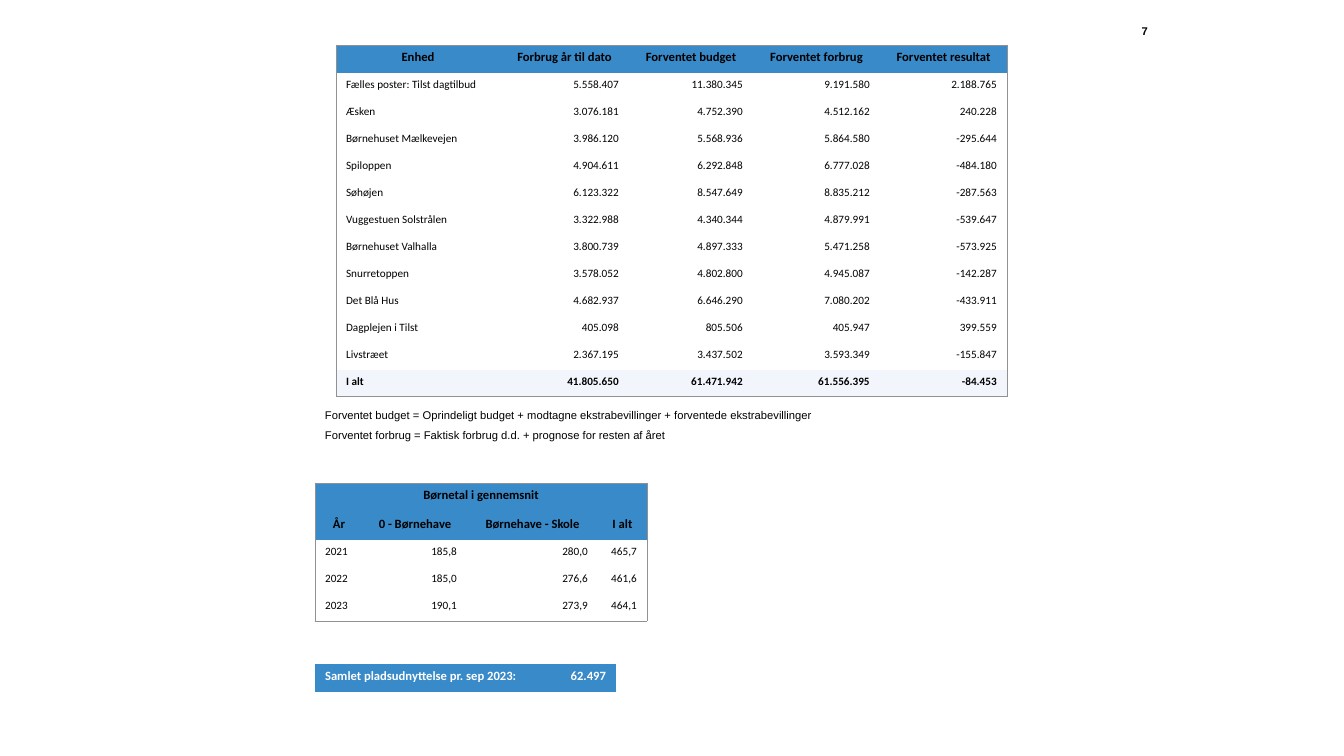
import pptx
import pptx.util
import pptx.oxml
import pptx.oxml.ns
import pptx.dml.color
import pptx.enum.text

RGB = pptx.dml.color.RGBColor
BLUE = RGB(0x39, 0x8A, 0xC9)
PALE = RGB(0xF2, 0xF5, 0xFC)
WHITE = RGB(0xFF, 0xFF, 0xFF)
BLACK = RGB(0, 0, 0)
EDGE = RGB(0x91, 0x91, 0x91)
PLAIN = "{2D5ABB26-0587-4C30-8999-92F81FD0307C}"
SCALE = 914400 / 100.8
ALIGN = pptx.enum.text.PP_ALIGN
ANCHOR = pptx.enum.text.MSO_ANCHOR
SIZE = pptx.enum.text.MSO_AUTO_SIZE

HEAD = {"size": 9, "bold": True, "color": BLACK, "fill": BLUE}
BODY = {"size": 8, "bold": False, "color": BLACK, "fill": WHITE}
TOTAL = {"size": 8, "bold": True, "color": BLACK, "fill": PALE}
BAND = {"size": 9, "bold": True, "color": WHITE, "fill": BLUE}

UNITS = [
    ("Enhed", "Forbrug år til dato", "Forventet budget", "Forventet forbrug", "Forventet resultat"),
    ("Fælles poster: Tilst dagtilbud", "5.558.407", "11.380.345", "9.191.580", "2.188.765"),
    ("Æsken", "3.076.181", "4.752.390", "4.512.162", "240.228"),
    ("Børnehuset Mælkevejen", "3.986.120", "5.568.936", "5.864.580", "-295.644"),
    ("Spiloppen", "4.904.611", "6.292.848", "6.777.028", "-484.180"),
    ("Søhøjen", "6.123.322", "8.547.649", "8.835.212", "-287.563"),
    ("Vuggestuen Solstrålen", "3.322.988", "4.340.344", "4.879.991", "-539.647"),
    ("Børnehuset Valhalla", "3.800.739", "4.897.333", "5.471.258", "-573.925"),
    ("Snurretoppen", "3.578.052", "4.802.800", "4.945.087", "-142.287"),
    ("Det Blå Hus", "4.682.937", "6.646.290", "7.080.202", "-433.911"),
    ("Dagplejen i Tilst", "405.098", "805.506", "405.947", "399.559"),
    ("Livstræet", "2.367.195", "3.437.502", "3.593.349", "-155.847"),
    ("I alt", "41.805.650", "61.471.942", "61.556.395", "-84.453"),
]
KIDS = [
    ("Børnetal i gennemsnit",),
    ("År", "0 - Børnehave", "Børnehave - Skole", "I alt"),
    ("2021", "185,8", "280,0", "465,7"),
    ("2022", "185,0", "276,6", "461,6"),
    ("2023", "190,1", "273,9", "464,1"),
]
USAGE = [("Samlet pladsudnyttelse pr. sep 2023:", "62.497")]

TABLES = [
    {"rows": UNITS, "at": (336, 45), "cols": (164, 129, 124, 127, 127),
     "high": [28] + [27] * 12, "looks": [HEAD] + [BODY] * 11 + [TOTAL], "edge": True},
    {"rows": KIDS, "at": (315, 483), "cols": (48, 104, 131, 49),
     "high": [29, 28] + [27] * 3, "looks": [HEAD] * 2 + [BODY] * 3, "edge": True},
    {"rows": USAGE, "at": (315, 664), "cols": (242, 59),
     "high": [28], "looks": [BAND], "edge": False},
]
NOTE = {"word_wrap": False, "auto_size": SIZE.SHAPE_TO_FIT_TEXT}
PAGE = {"word_wrap": True, "vertical_anchor": ANCHOR.MIDDLE, "margin_left": 0,
        "margin_top": 0, "margin_right": round(3 * SCALE), "margin_bottom": 0}
NOTES = [
    ("Forventet budget = Oprindeligt budget + modtagne ekstrabevillinger + forventede ekstrabevillinger",
     (315, 403, 513, 24), NOTE, ALIGN.LEFT, False),
    ("Forventet forbrug = Faktisk forbrug d.d. + prognose for resten af året",
     (315, 423, 365, 24), NOTE, ALIGN.LEFT, False),
    ("7", (1138, 25, 13, 13), PAGE, ALIGN.RIGHT, True),
]


def px(n):
    return round(n * SCALE)


def write(frame, text, align, name, size, bold, color):
    para = frame.paragraphs[0]
    para.alignment = align
    run = para.add_run()
    run.text = text
    look = {"name": name, "size": pptx.util.Pt(size), "bold": bold}
    for key, value in look.items():
        setattr(run.font, key, value)
    run.font.color.rgb = color


def rule(cell, side):
    space = pptx.oxml.ns.nsdecls("a")
    line = pptx.oxml.parse_xml(
        f'<a:ln{side} {space} w="6350"><a:solidFill><a:srgbClr val="{EDGE}"/>'
        f'</a:solidFill><a:prstDash val="solid"/></a:ln{side}>')
    cell._tc.get_or_add_tcPr().append(line)


def build(slide, rows, at, cols, high, looks, edge):
    box = map(px, (*at, sum(cols), sum(high)))
    frame = slide.shapes.add_table(len(rows), len(cols), *box)
    table = frame.table
    frame._element.find(".//" + pptx.oxml.ns.qn("a:tableStyleId")).text = PLAIN
    table.first_row = table.horz_banding = False
    for col, wide in zip(table.columns, cols):
        col.width = px(wide)
    for i, (row, look) in enumerate(zip(rows, looks)):
        table.rows[i].height = px(high[i])
        if len(row) < len(cols):
            table.cell(i, 0).merge(table.cell(i, len(cols) - 1))
        for j, text in enumerate(row):
            cell = table.cell(i, j)
            sides = {"L": j == 0, "R": j + cell.span_width == len(cols),
                     "T": i == 0, "B": i == len(rows) - 1}
            for side, outer in sides.items():
                if edge and outer:
                    rule(cell, side)
            cell.fill.solid()
            cell.fill.fore_color.rgb = look["fill"]
            align = ALIGN.CENTER if look is HEAD else ALIGN.RIGHT if j else ALIGN.LEFT
            write(cell.text_frame, text, align, "Calibri",
                  look["size"], look["bold"], look["color"])


def main():
    deck = pptx.Presentation()
    deck.slide_width, deck.slide_height = px(1344), px(756)
    slide = deck.slides.add_slide(deck.slide_layouts[6])
    for table in TABLES:
        build(slide, **table)
    for text, box, look, align, bold in NOTES:
        shape = slide.shapes.add_textbox(*map(px, box))
        shape.fill.solid()
        shape.fill.fore_color.rgb = WHITE
        for key, value in look.items():
            setattr(shape.text_frame, key, value)
        write(shape.text_frame, text, align, "Arial", 8, bold, BLACK)
    deck.save("out.pptx")


if __name__ == "__main__":
    main()
